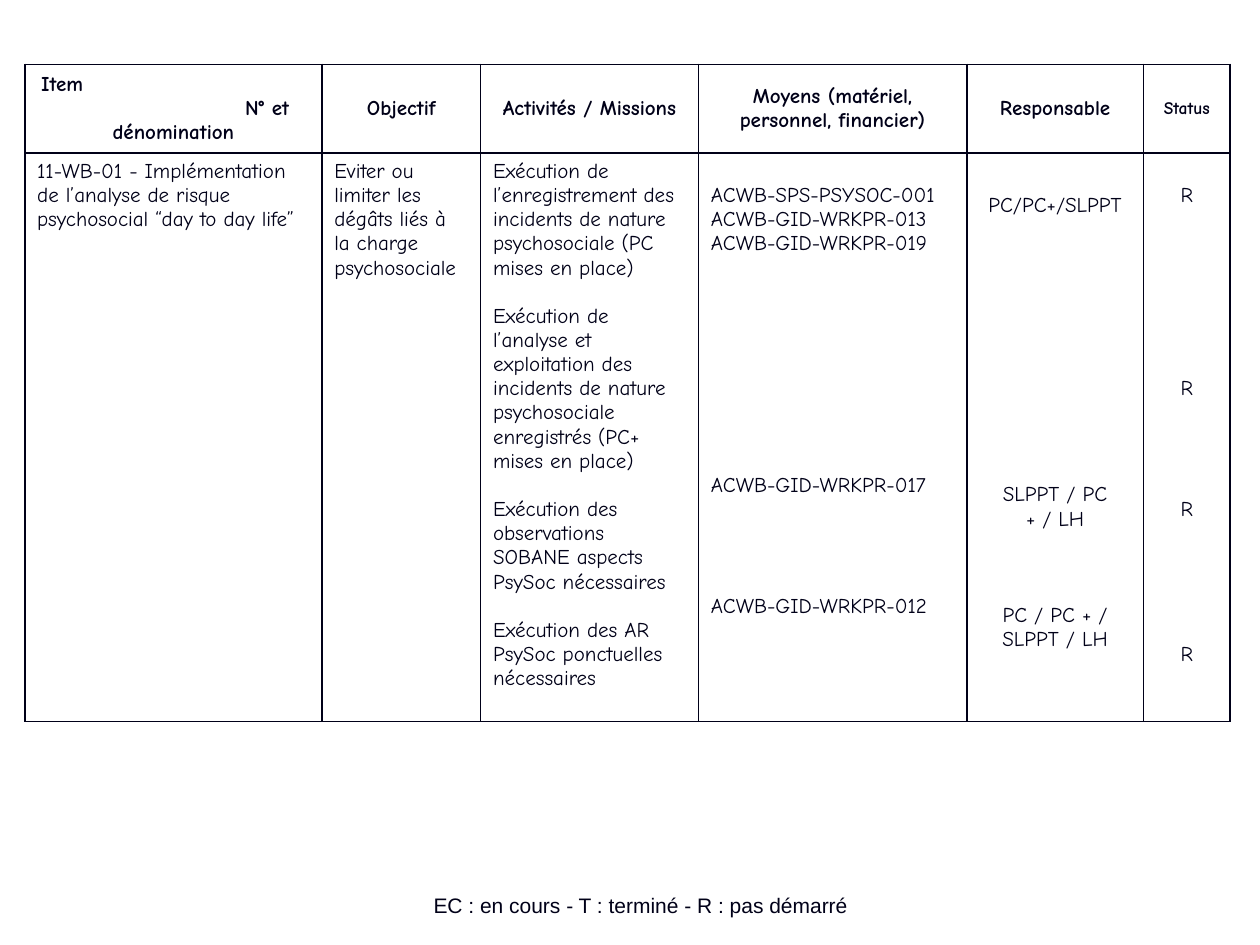
from lxml import etree
from pptx import Presentation
from pptx.dml.color import RGBColor
from pptx.enum.text import MSO_ANCHOR as Anchor, PP_ALIGN as Align
from pptx.oxml.ns import qn
from pptx.util import Cm, Pt

COLORS = {"ink": "000018"}
TABLE_FONT = "Comic Neue"
LINE = 13.8  # height of one 12 pt table line, in points
MARGIN_X, MARGIN_Y = Cm(0.25), Cm(0.13)

COLUMN_WIDTHS = [5.99, 3.2, 4.39, 5.41, 3.56, 1.75]
ROW_HEIGHTS = [1.72, 11.46]
HEADINGS = [
    "Objectif",
    "Activités / Missions",
    "Moyens (matériel, personnel, financier)",
    "Responsable",
    "Status",
]

# Each body cell: lines skipped at the top, alignment, then (lines skipped, text) pairs.
BODY = [
    (0, Align.LEFT, [
        (0, "11-WB-01 - Implémentation de l’analyse de risque psychosocial “day to day life”"),
    ]),
    (0, Align.LEFT, [
        (0, "Eviter ou limiter les dégâts liés à la charge psychosociale"),
    ]),
    (0, Align.LEFT, [
        (0, "Exécution de l’enregistrement des incidents de nature psychosociale (PC mises en place)"),
        (1, "Exécution de l’analyse et exploitation des incidents de nature psychosociale "
            "enregistrés (PC+ mises en place)"),
        (1, "Exécution des observations SOBANE aspects PsySoc nécessaires"),
        (1, "Exécution des AR PsySoc ponctuelles nécessaires"),
    ]),
    (1, Align.LEFT, [
        (0, "ACWB-SPS-PSYSOC-001"),
        (0, "ACWB-GID-WRKPR-013"),
        (0, "ACWB-GID-WRKPR-019"),
        (9, "ACWB-GID-WRKPR-017"),
        (4, "ACWB-GID-WRKPR-012"),
    ]),
    (1.4, Align.CENTER, [
        (0, "PC/PC+/SLPPT"),
        (11, "SLPPT / PC"),
        (0, "+ / LH"),
        (3, "PC / PC + / SLPPT / LH"),
    ]),
    (1, Align.CENTER, [(0, "R"), (7, "R"), (4, "R"), (5, "R")]),
]


def write(frame, text, *, first=False, font=TABLE_FONT, size=12, bold=False,
          align=Align.LEFT, before=0, indent=0):
    """Write one paragraph; first=True uses the paragraph the frame already has."""
    paragraph = frame.paragraphs[0] if first else frame.add_paragraph()
    paragraph.alignment = align
    if before:
        paragraph.space_before = Pt(before)
    if indent:
        paragraph._p.get_or_add_pPr().set("marL", str(Cm(indent)))
    run = paragraph.add_run()
    run.text = text
    run.font.name = font
    run.font.size = Pt(size)
    run.font.bold = bold
    run.font.color.rgb = RGBColor.from_string(COLORS["ink"])


def style_cell(cell, anchor, skipped_lines=0):
    """Set margins, one-point borders on all sides and no fill."""
    cell.vertical_anchor = anchor
    cell.margin_left = cell.margin_right = MARGIN_X
    cell.margin_top = MARGIN_Y + Pt(skipped_lines * LINE)
    cell.margin_bottom = MARGIN_Y
    properties = cell._tc.get_or_add_tcPr()
    for side in ("a:lnL", "a:lnR", "a:lnT", "a:lnB"):
        border = etree.SubElement(properties, qn(side), w=str(Pt(1)))
        fill = etree.SubElement(border, qn("a:solidFill"))
        etree.SubElement(fill, qn("a:srgbClr"), val=COLORS["ink"])
    cell.fill.background()


def fill_header(table):
    for column in range(len(COLUMN_WIDTHS)):
        style_cell(table.cell(0, column), Anchor.MIDDLE)
    item = table.cell(0, 0).text_frame
    write(item, "Item", first=True, bold=True, indent=0.08)
    write(item, "N° et", bold=True, indent=4.19)
    write(item, "dénomination", bold=True, align=Align.CENTER)
    for column, heading in enumerate(HEADINGS, start=1):
        write(table.cell(0, column).text_frame, heading, first=True, bold=True,
              size=10 if heading == "Status" else 12, align=Align.CENTER)


def fill_body(table):
    for column, (skipped, align, entries) in enumerate(BODY):
        cell = table.cell(1, column)
        style_cell(cell, Anchor.TOP, skipped)
        for index, (gap, text) in enumerate(entries):
            write(cell.text_frame, text, first=index == 0, align=align, before=gap * LINE)


def add_action_table(slide, left, top):
    frame = slide.shapes.add_table(
        len(ROW_HEIGHTS), len(COLUMN_WIDTHS), left, top,
        Cm(sum(COLUMN_WIDTHS)), Cm(sum(ROW_HEIGHTS)))
    table = frame.table
    table.first_row = table.horz_banding = False
    for column, width in zip(table.columns, COLUMN_WIDTHS):
        column.width = Cm(width)
    for row, height in zip(table.rows, ROW_HEIGHTS):
        row.height = Cm(height)
    fill_header(table)
    fill_body(table)


def add_legend(slide, left, top, width, height):
    frame = slide.shapes.add_textbox(left, top, width, height).text_frame
    frame.word_wrap = True
    frame.vertical_anchor = Anchor.BOTTOM
    write(frame, "EC : en cours - T : terminé - R : pas démarré",
          first=True, font="Arial", align=Align.CENTER)


def main():
    presentation = Presentation()
    presentation.slide_width, presentation.slide_height = Cm(25.4), Cm(19.05)
    slide = presentation.slides.add_slide(presentation.slide_layouts[6])
    add_legend(slide, Cm(5.92), Cm(17.35), Cm(14), Cm(1.27))
    add_action_table(slide, Cm(0.5), Cm(1.3))
    presentation.save("out.pptx")


if __name__ == "__main__":
    main()
